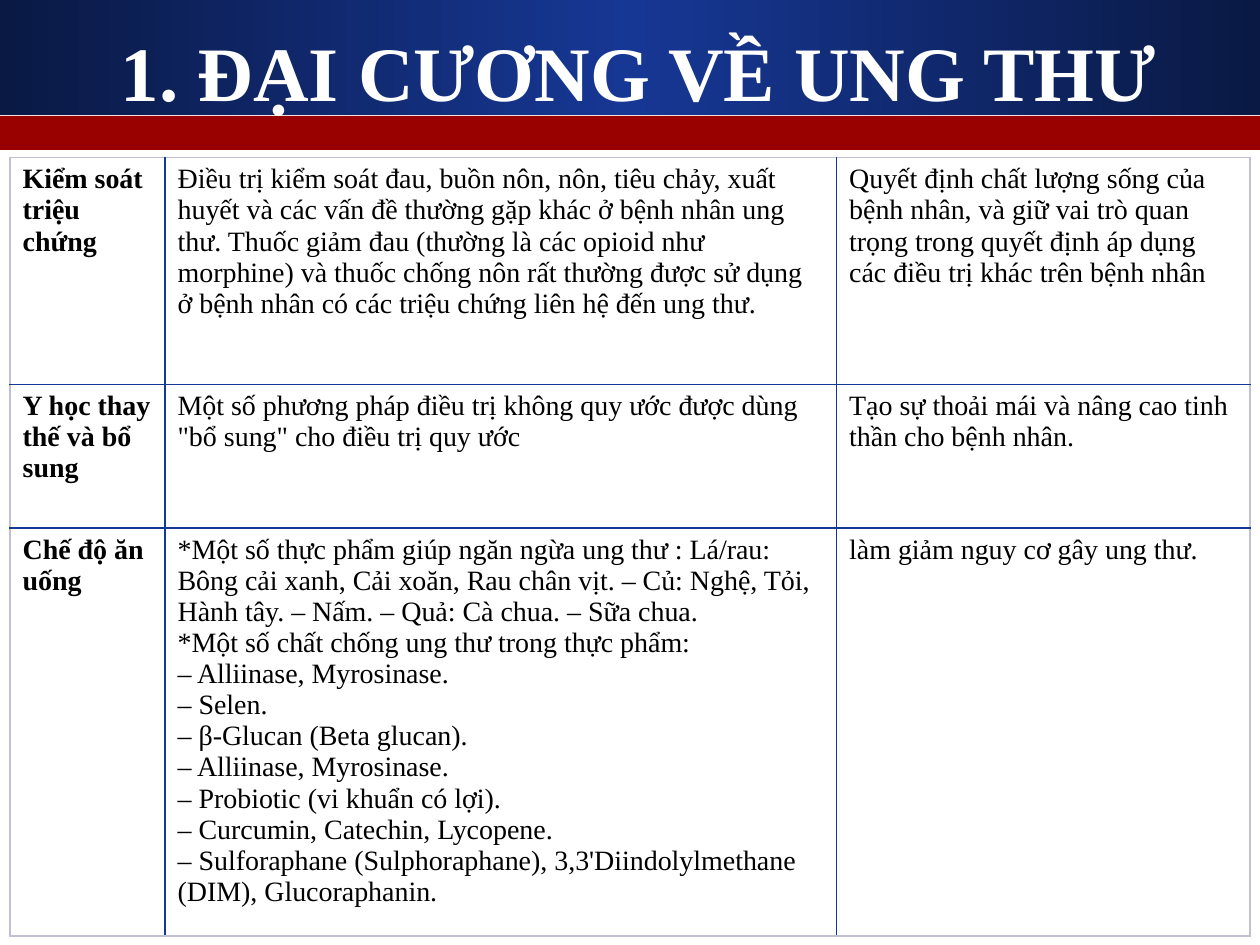
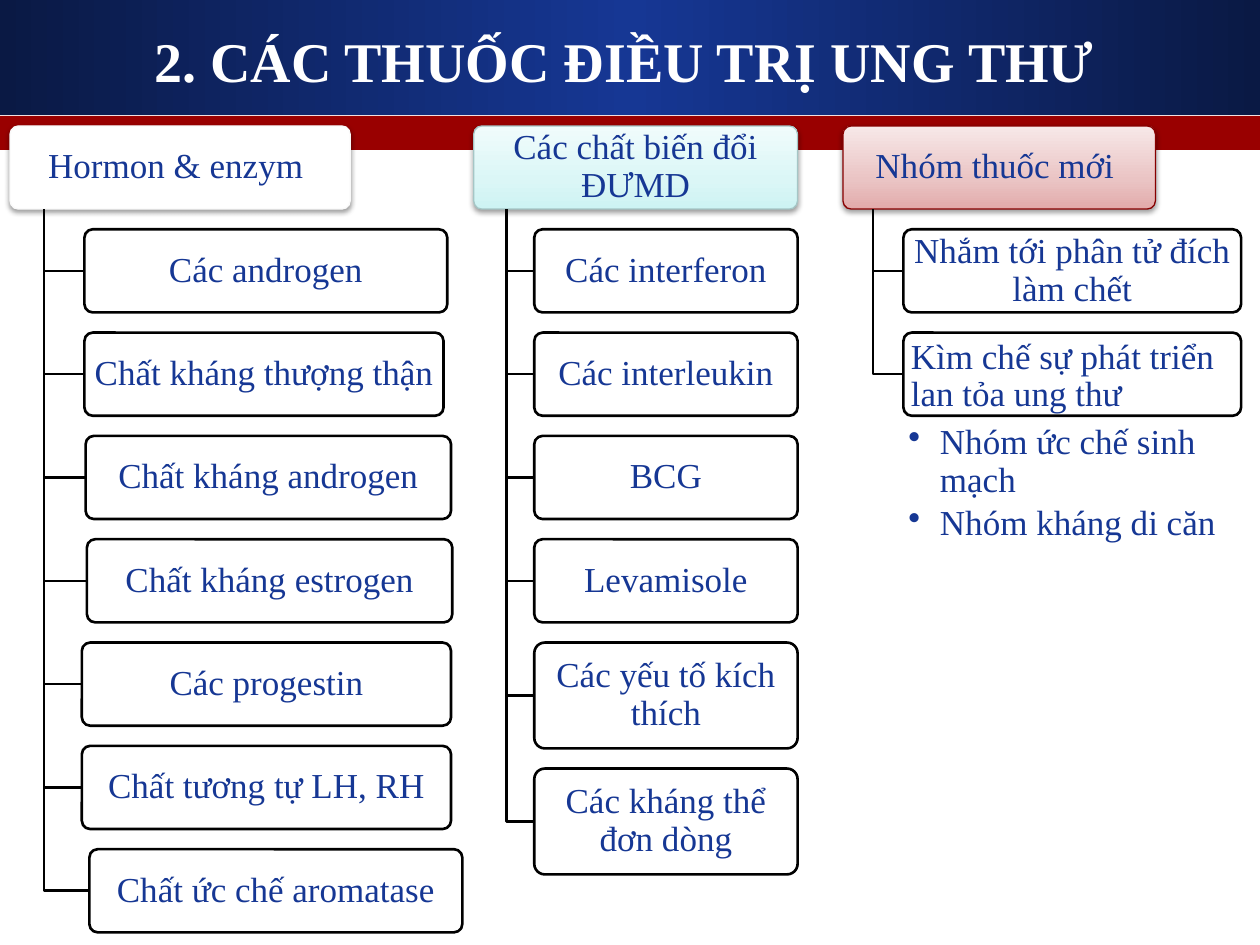
import copy

import pptx
import pptx.dml.color
import pptx.enum.shapes
import pptx.enum.text
import pptx.oxml
import pptx.oxml.ns
import pptx.util
from lxml import etree

Inches = pptx.util.Inches
Pt = pptx.util.Pt
qn = pptx.oxml.ns.qn
SHAPE = pptx.enum.shapes.MSO_SHAPE
ALIGN = pptx.enum.text.PP_ALIGN
ANCHOR = pptx.enum.text.MSO_ANCHOR

COLORS = {
    "white": "FFFFFF", "black": "000000", "blue": "163794", "red": "990000",
    "pale": "F9F9F9", "teal": "A5C6C6", "dark_red": "870000", "outer": "C0C0D0",
}
BAND_STOPS = [(0, "163794"), (0.5, "163794"), (1, "163794")]
TEAL_STOPS = [(0, "CDF3F3"), (0.35, "DBF6F6"), (1, "F0FCFC")]
ROSE_STOPS = [(0, "E2AAAA"), (0.35, "EAC4C4"), (1, "F7E8E8")]

TREATMENT_ROWS = [
    ("Kiểm soát triệu chứng",
     "Điều trị kiểm soát đau, buồn nôn, nôn, tiêu chảy, xuất huyết và các vấn đề thường gặp khác "
     "ở bệnh nhân ung thư. Thuốc giảm đau (thường là các opioid như morphine) và thuốc chống nôn "
     "rất thường được sử dụng ở bệnh nhân có các triệu chứng liên hệ đến ung thư.",
     "Quyết định chất lượng sống của bệnh nhân, và giữ vai trò quan trọng trong quyết định "
     "áp dụng các điều trị khác trên bệnh nhân"),
    ("Y học thay thế và bổ sung",
     'Một số phương pháp điều trị không quy ước được dùng "bổ sung" cho điều trị quy ước',
     "Tạo sự thoải mái và nâng cao tinh thần cho bệnh nhân."),
    ("Chế độ ăn uống",
     "*Một số thực phẩm giúp ngăn ngừa ung thư : Lá/rau: Bông cải xanh, Cải xoăn, Rau chân vịt. "
     "‒ Củ: Nghệ, Tỏi, Hành tây. ‒ Nấm. ‒ Quả: Cà chua. ‒ Sữa chua.\n"
     "*Một số chất chống ung thư trong thực phẩm:\n"
     "‒ Alliinase, Myrosinase.\n"
     "‒ Selen.\n"
     "‒ β-Glucan (Beta glucan).\n"
     "‒ Alliinase, Myrosinase.\n"
     "‒ Probiotic (vi khuẩn có lợi).\n"
     "‒ Curcumin, Catechin, Lycopene.\n"
     "‒ Sulforaphane (Sulphoraphane), 3,3'Diindolylmethane (DIM), Glucoraphanin.",
     "làm giảm nguy cơ gây ung thư."),
]

HORMONES = [
    ("Các androgen", 0.67, 2.88, 0.66),
    ("Chất kháng thượng thận", 0.67, 2.85, 0.66),
    ("Chất kháng androgen", 0.68, 2.9, 0.66),
    ("Chất kháng estrogen", 0.69, 2.9, 0.66),
    ("Các progestin", 0.65, 2.93, 0.66),
    ("Chất tương tự LH, RH", 0.65, 2.93, 0.66),
    ("Chất ức chế aromatase", 0.71, 2.96, 0.66),
]
MODIFIERS = [(text, 4.24, 2.09, height) for text, height in [
    ("Các interferon", 0.66), ("Các interleukin", 0.66), ("BCG", 0.66), ("Levamisole", 0.66),
    ("Các yếu tố kích thích", 0.84), ("Các kháng thể đơn dòng", 0.84)]]
NEW_DRUGS = [
    ("Nhắm tới phân tử đích làm chết", 7.17, 2.68, 0.66),
    ("Kìm chế sự phát triển lan tỏa ung thư", 7.17, 2.68, 0.66),
]
SPREAD_INHIBITORS = "Nhóm ức chế sinh mạch\nNhóm kháng di căn"
GROUPS = [
    ("Hormon & enzym ", 0.08, 2.7, 0.35, "white", "pale", HORMONES),
    ("Các chất biến đổi ĐƯMD", 3.76, 2.57, 4.02, TEAL_STOPS, "teal", MODIFIERS),
    ("Nhóm thuốc mới ", 6.69, 2.48, 6.93, ROSE_STOPS, "dark_red", NEW_DRUGS),
]
HEAD_TOP, HEAD_HEIGHT, FIRST_TOP, GAP = 1, 0.66, 1.82, 0.16


def rgb(name):
    return pptx.dml.color.RGBColor.from_string(COLORS.get(name, name))


class Deck:
    font = "Times New Roman"

    def __init__(self):
        self.prs = pptx.Presentation()
        self.prs.slide_width, self.prs.slide_height = Inches(10), Inches(7.5)
        self.layout = self.prs.slide_layouts[5]
        self.s = None

    def slide(self, title, box, size):
        first = self.s is None
        self.s = self.prs.slides.add_slide(self.layout)
        if first:
            self.bands()
        sp = self.s.shapes.title
        sp.left, sp.top, sp.width, sp.height = map(Inches, box)
        sp.text_frame.auto_size = pptx.enum.text.MSO_AUTO_SIZE.NONE
        self.text(sp.text_frame, title, size, "white", bold=True, alignment=ALIGN.CENTER)

    def bands(self):
        title, *others = self.layout.placeholders
        for ph in others:
            ph.element.getparent().remove(ph.element)
        top = self.shape(SHAPE.RECTANGLE, (0, 0, 10, 0.91), BAND_STOPS, angle=0)
        gradient = top.element.spPr.find(".//" + qn("a:gsLst"))
        for i in (0, 2):
            etree.SubElement(gradient[i][0], qn("a:gamma"))
            etree.SubElement(gradient[i][0], qn("a:shade"), val="46275")
            etree.SubElement(gradient[i][0], qn("a:invGamma"))
        bottom = self.shape(SHAPE.RECTANGLE, (0, 0.92, 10, 0.27), "red")
        for sp in (top, bottom):
            title.element.addprevious(sp.element)

    def text(self, tf, text, size, color, bold=False, anchor=ANCHOR.MIDDLE, **formats):
        tf.word_wrap, tf.vertical_anchor = True, anchor
        for i, line in enumerate(text.split("\n")):
            p = tf.paragraphs[0] if i == 0 else tf.add_paragraph()
            for key, value in formats.items():
                setattr(p, key, value)
            r = p.add_run()
            r.text = line
            style = {"name": self.font, "size": Pt(size), "bold": bold}
            for key, value in style.items():
                setattr(r.font, key, value)
            r.font.color.rgb = rgb(color)

    def shape(self, kind, box, fill, line=None, width=1.5, angle=90):
        sp = self.s.shapes.add_shape(kind, *map(Inches, box))
        sp.shadow.inherit = False
        if isinstance(fill, str):
            sp.fill.solid()
            sp.fill.fore_color.rgb = rgb(fill)
        else:
            sp.fill.gradient()
            sp.fill.gradient_angle = angle
            stops = sp.element.spPr.find(".//" + qn("a:gsLst"))
            stops.append(copy.deepcopy(stops[0]))
            for stop, (position, color) in zip(sp.fill.gradient_stops, fill):
                stop.position, stop.color.rgb = position, rgb(color)
        if line:
            sp.line.color.rgb, sp.line.width = rgb(line), Pt(width)
        else:
            sp.line.fill.background()
        return sp

    def margins(self, tf, side, top):
        tf.margin_left = tf.margin_right = Inches(side)
        tf.margin_top = tf.margin_bottom = Inches(top)

    def box(self, text, box, fill="white", line="black", width=1.5):
        sp = self.shape(SHAPE.ROUNDED_RECTANGLE, box, fill, line, width)
        sp.adjustments[0] = 0.1
        self.margins(sp.text_frame, 0.06, 0.05)
        self.text(sp.text_frame, text, 20, "blue", alignment=ALIGN.CENTER, line_spacing=0.9)
        return sp

    def shadow(self, sp):
        effects = sp.element.spPr.find(qn("a:effectLst"))
        outer = etree.SubElement(effects, qn("a:outerShdw"), blurRad=str(Pt(3.1)),
                                 dist=str(Pt(1.6)), dir="5400000", rotWithShape="0")
        color = etree.SubElement(outer, qn("a:srgbClr"), val=COLORS["black"])
        etree.SubElement(color, qn("a:alpha"), val="38000")

    def elbow(self, x, top, right, bottom):
        builder = self.s.shapes.build_freeform(Inches(x), Inches(top))
        builder.add_line_segments(
            [(Inches(x), Inches(bottom)), (Inches(right), Inches(bottom))], close=False)
        sp = builder.convert_to_shape()
        sp.shadow.inherit = False
        sp.fill.background()
        sp.line.color.rgb, sp.line.width = rgb("black"), Pt(1.5)

    def bullets(self, text, box):
        tf = self.s.shapes.add_textbox(*map(Inches, box)).text_frame
        self.margins(tf, 0.02, 0)
        self.text(tf, text, 20, "blue", anchor=ANCHOR.TOP, line_spacing=0.9, space_after=Pt(3))
        for p in tf.paragraphs:
            pPr = p._p.get_or_add_pPr()
            pPr.set("marL", str(Inches(0.25)))
            pPr.set("indent", str(Inches(-0.25)))
            etree.SubElement(pPr, qn("a:buChar"), char="•")

    def group(self, head, left, width, trunk, fill, line, items):
        sp = self.box(head, (left, HEAD_TOP, width, HEAD_HEIGHT), fill, line, 0.75)
        self.shadow(sp)
        top = FIRST_TOP
        for text, x, w, h in items:
            self.elbow(trunk, HEAD_TOP + HEAD_HEIGHT, x, top + h / 2)
            sp = self.box(text, (x, top, w, h))
            top += h + GAP
        return sp

    def border(self, cell, side, color):
        ln = etree.SubElement(cell._tc.get_or_add_tcPr(), qn("a:ln" + side), w=str(Pt(1)))
        solid = etree.SubElement(ln, qn("a:solidFill"))
        etree.SubElement(solid, qn("a:srgbClr"), val=COLORS[color])

    def table(self, rows, left, top, widths, heights):
        table = self.s.shapes.add_table(
            len(heights), len(widths), Inches(left), Inches(top),
            Inches(sum(widths)), Inches(sum(heights))).table
        table.first_row = table.horz_banding = False
        for column, width in zip(table.columns, widths):
            column.width = Inches(width)
        for row, height in zip(table.rows, heights):
            row.height = Inches(height)
        for i, row in enumerate(rows):
            for j, text in enumerate(row):
                cell = table.cell(i, j)
                self.text(cell.text_frame, text, 16, "black", bold=j == 0, anchor=ANCHOR.TOP)
                edges = {"L": j == 0, "R": j == len(widths) - 1,
                         "T": i == 0, "B": i == len(heights) - 1}
                for side, outer in edges.items():
                    self.border(cell, side, "outer" if outer else "blue")
                cell.fill.background()


def main():
    deck = Deck()
    deck.slide("1. ĐẠI CƯƠNG VỀ UNG THƯ", (0.82, 0.02, 8.5, 1.08), 44)
    deck.table(TREATMENT_ROWS, 0.08, 1.25, (1.23, 5.33, 3.28), (1.8, 1.14, 3.24))
    deck.slide("2. CÁC THUỐC ĐIỀU TRỊ UNG THƯ", (0.33, 0.17, 9.25, 0.62), 32)
    for group in GROUPS:
        spread = deck.group(*group)
    deck.margins(spread.text_frame, 0.04, 0.03)
    spread.text_frame.vertical_anchor = ANCHOR.TOP
    spread.text_frame.paragraphs[0].alignment = ALIGN.LEFT
    deck.bullets(SPREAD_INHIBITORS, (7.19, 3.37, 2.64, 1.05))
    deck.prs.save("out.pptx")


if __name__ == "__main__":
    main()
